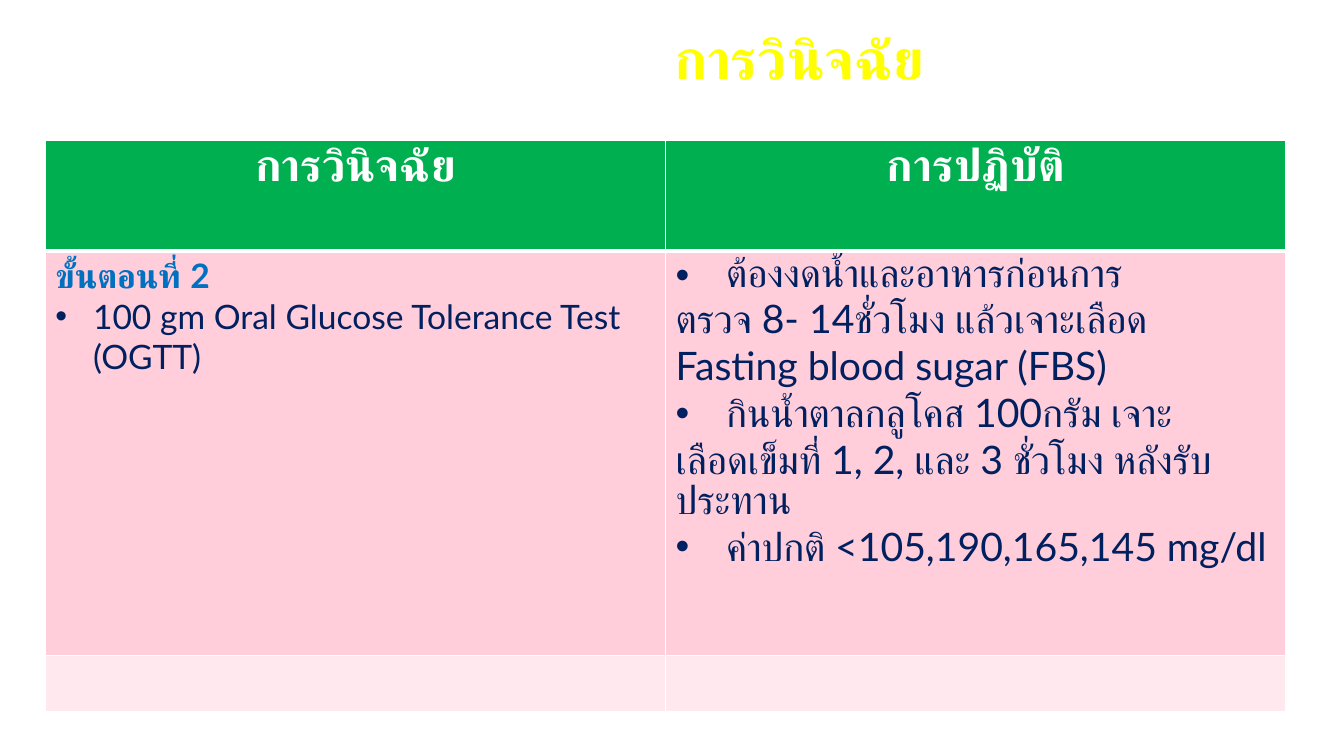
from lxml.etree import SubElement
from pptx import Presentation
from pptx.dml.color import RGBColor
from pptx.enum.text import MSO_ANCHOR, MSO_AUTO_SIZE, PP_ALIGN
from pptx.oxml.ns import qn
from pptx.util import Cm, Pt

# Text styles
BASE = {"name": "Lato", "bold": False}
TITLE = {**BASE, "size": Pt(40), "bold": True, "color": "FFFF00"}
HEAD = {**TITLE, "size": Pt(32), "color": "FFFFFF"}
STEP = {**TITLE, "size": Pt(24), "color": "0070C0"}
TEST = {**BASE, "size": Pt(24), "color": "002060"}
CARE = {**TEST, "size": Pt(28)}

# Table rows: fill, height and cells; a line is text, style and bullet indent
ROWS = [
    ("00B050", 2.79, [[("การวินิจฉัย", HEAD, 0)], [("การปฏิบัติ", HEAD, 0)]]),
    ("FFCEDA", 10.19, [
        [("ขั้นตอนที่ 2", STEP, 0),
         ("100 gm Oral Glucose Tolerance Test (OGTT)", TEST, 0.95)],
        [("ต้องงดน้ำและอาหารก่อนการ", CARE, 1.27),
         ("ตรวจ 8- 14ชั่วโมง แล้วเจาะเลือด Fasting blood sugar (FBS)", CARE, 0),
         ("กินน้ำตาลกลูโคส 100กรัม เจาะ", CARE, 1.27),
         ("เลือดเข็มที่ 1, 2, และ 3 ชั่วโมง หลังรับประทาน", CARE, 0),
         ("ค่าปกติ <105,190,165,145 mg/dl", CARE, 1.27)]]),
    ("FFE8EE", 1.42, [[], []]),
]


def paint(code):
    return RGBColor.from_string(code)


class Deck:
    def __init__(self, wide, high):
        self.file = Presentation()
        self.file.slide_width, self.file.slide_height = Cm(wide), Cm(high)
        self.slide = self.file.slides.add_slide(self.file.slide_layouts[5])

    def label(self, para, text, style):
        run = para.add_run()
        run.text = text
        for key, value in style.items():
            if key == "color":
                run.font.color.rgb = paint(value)
            else:
                setattr(run.font, key, value)

    def bullet(self, para, indent):
        props = para._p.get_or_add_pPr()
        props.set("marL", str(Cm(indent)))
        props.set("indent", str(-Cm(indent)))
        SubElement(props, qn("a:buFont"), typeface="Arial")
        SubElement(props, qn("a:buChar"), char="•")

    def title(self, text, place):
        shape = self.slide.shapes.title
        for key, value in zip(("left", "top", "width", "height"), place):
            setattr(shape, key, Cm(value))
        frame = shape.text_frame
        frame.auto_size = MSO_AUTO_SIZE.NONE
        frame.vertical_anchor = MSO_ANCHOR.MIDDLE
        frame.paragraphs[0].alignment = PP_ALIGN.CENTER
        self.label(frame.paragraphs[0], text, TITLE)

    def border(self, cell, widths):
        props = cell._tc.get_or_add_tcPr()
        for side, width in widths.items():
            line = SubElement(props, qn("a:ln" + side), w=str(Pt(width)))
            fill = SubElement(line, qn("a:solidFill"))
            SubElement(fill, qn("a:srgbClr"), val="FFFFFF")

    def cell(self, cell, lines, fill, widths):
        self.border(cell, widths)
        cell.fill.solid()
        cell.fill.fore_color.rgb = paint(fill)
        frame = cell.text_frame
        for i, (text, style, indent) in enumerate(lines):
            para = frame.add_paragraph() if i else frame.paragraphs[0]
            if style is HEAD:
                para.alignment = PP_ALIGN.CENTER
            if indent:
                self.bullet(para, indent)
            self.label(para, text, style)

    def table(self, rows, left, top, wide):
        high = sum(row[1] for row in rows)
        count = len(rows[0][2])
        grid = self.slide.shapes.add_table(
            len(rows), count, Cm(left), Cm(top), Cm(wide), Cm(high)).table
        grid.horz_banding = False
        grid.first_row = False
        for r, (fill, tall, cells) in enumerate(rows):
            grid.rows[r].height = Cm(tall)
            # The rule under the header is thicker
            widths = {"L": 1, "R": 1, "T": 3 if r == 1 else 1, "B": 3 if r == 0 else 1}
            for c, lines in enumerate(cells):
                self.cell(grid.cell(r, c), lines, fill, widths)


def main():
    deck = Deck(33.87, 19.05)
    deck.title("การวินิจฉัย", (7.87, 0.74, 24.54, 1.4))
    deck.table(ROWS, 1.14, 3.53, 31.27)
    deck.file.save("out.pptx")


if __name__ == "__main__":
    main()
